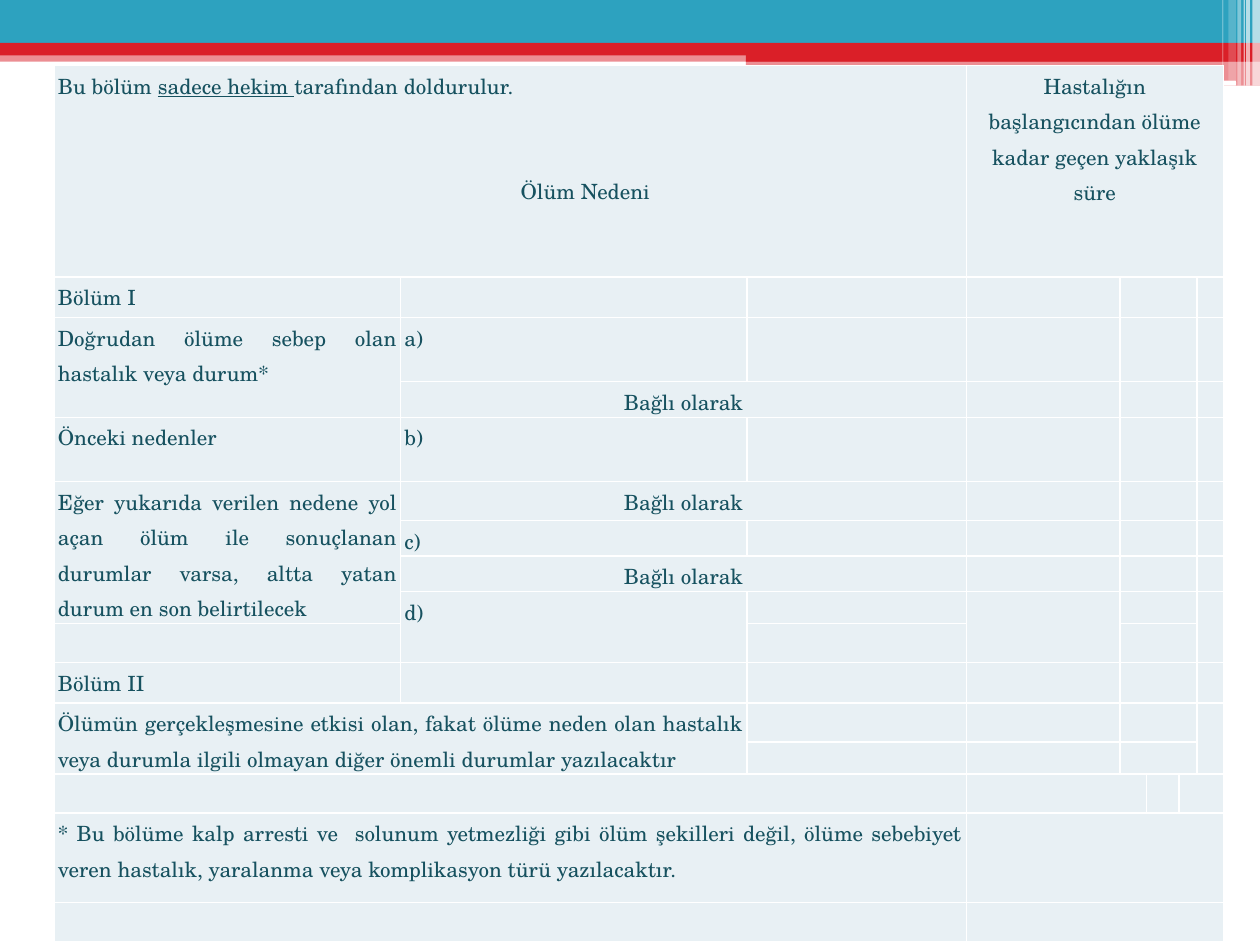
from lxml import etree
from pptx import Presentation
from pptx.dml.color import RGBColor
from pptx.enum.shapes import MSO_SHAPE
from pptx.enum.text import PP_ALIGN
from pptx.oxml.ns import qn
from pptx.util import Inches, Pt

RECT, ROUND = MSO_SHAPE.RECTANGLE, MSO_SHAPE.ROUNDED_RECTANGLE
LEFT, MID, JUST = PP_ALIGN.LEFT, PP_ALIGN.CENTER, PP_ALIGN.JUSTIFY

THEME = {
    "font": "TeX Gyre Schola", "size": 12, "ink": "16515F", "cell": "E8F0F4",
    "white": "FFFFFF", "teal": "2DA2BF", "red": "DA1F28",
}

# Banner parts: shape, left, top, width, height, colour, opacity in percent
BANNER = [
    (RECT, 0, 0.4, 10, 0.09, "red", 50),
    (RECT, 0, 0, 10, 0.34, "teal", 100),
    (RECT, 0, 0.34, 10, 0.1, "red", 100),
    (RECT, 5.92, 0.39, 4.08, 0.1, "red", 100),
    (RECT, 5.92, 0.48, 4.08, 0.2, "red", 50),
    (ROUND, 5.91, 0.54, 3.35, 0.03, "white", 100),
    (ROUND, 8.06, 0.64, 1.75, 0.04, "white", 100),
]
# Pale stripes at the right end: left, width, height, opacity
STRIPES = [
    (9.94, 0.06, 0.68, 65), (9.89, 0.03, 0.68, 65), (9.87, 0.01, 0.68, 60),
    (9.82, 0.03, 0.68, 40), (9.75, 0.06, 0.64, 20), (9.7, 0.01, 0.64, 30),
]

COLS = [2.75, 2.75, 1.74, 1.22, 0.21, 0.26, 0.14, 0.21]
ROWS = [1.68, 0.32, 0.51, 0.2, 0.51, 0.31, 0.2, 0.2,
        0.21, 0.31, 0.32, 0.31, 0.24, 0.31, 0.71, 0.31]

INTRO = ["Bu bölüm ", "sadece hekim ", "tarafından doldurulur."]
CAUSE = "Ölüm Nedeni"
DUE = "Bağlı olarak"
# (row, column): text, alignment
TEXTS = {
    (0, 3): ("Hastalığın başlangıcından ölüme kadar geçen yaklaşık süre", MID),
    (1, 0): ("Bölüm I", JUST),
    (2, 0): ("Doğrudan ölüme sebep olan hastalık veya durum*", JUST),
    (2, 1): ("a)", JUST),
    (3, 1): (DUE, MID),
    (4, 0): ("Önceki nedenler", JUST),
    (4, 1): ("b)", JUST),
    (5, 0): ("Eğer yukarıda verilen nedene yol açan ölüm ile sonuçlanan "
             "durumlar varsa, altta yatan durum en son belirtilecek", JUST),
    (5, 1): (DUE, MID),
    (6, 1): ("c)", JUST),
    (7, 1): (DUE, MID),
    (8, 1): ("d)", JUST),
    (10, 0): ("Bölüm II", JUST),
    (11, 0): ("Ölümün gerçekleşmesine etkisi olan, fakat ölüme neden olan "
              "hastalık veya durumla ilgili olmayan diğer önemli durumlar "
              "yazılacaktır", JUST),
    (14, 0): ("* Bu bölüme kalp arresti ve  solunum yetmezliği gibi ölüm "
              "şekilleri değil, ölüme sebebiyet veren hastalık, yaralanma "
              "veya komplikasyon türü yazılacaktır.", JUST),
}

# Merged areas: first row, first column, last row, last column
MERGES = [(r, 4, r, 6) for r in range(1, 13)]
MERGES += [(r, 1, r, 2) for r in (3, 5, 7)]
MERGES += [(r, 0, r, 2) for r in (0, 13, 14, 15)]
MERGES += [(r, 3, r, 7) for r in (0, 14, 15)]
MERGES += [(2, 0, 3, 0), (5, 0, 8, 0), (8, 1, 9, 1), (8, 3, 9, 3),
           (8, 7, 9, 7), (11, 0, 12, 1), (11, 7, 12, 7),
           (13, 3, 13, 4), (13, 6, 13, 7)]


def tint(name):
    return RGBColor.from_string(THEME[name])


def add_bar(slide, kind, left, top, width, height, color, alpha):
    bar = slide.shapes.add_shape(
        kind, Inches(left), Inches(top), Inches(width), Inches(height))
    bar.shadow.inherit = False
    bar.line.fill.background()
    bar.fill.solid()
    bar.fill.fore_color.rgb = tint(color)
    if alpha < 100:
        clr = bar.fill._xPr.find(".//" + qn("a:srgbClr"))
        etree.SubElement(clr, qn("a:alpha"), val=str(alpha * 1000))


def style_cell(cell):
    props = cell._tc.get_or_add_tcPr()
    for side in ("lnL", "lnR", "lnT", "lnB"):
        line = etree.SubElement(props, qn("a:" + side), w=str(Pt(1)))
        fill = etree.SubElement(line, qn("a:solidFill"))
        etree.SubElement(fill, qn("a:srgbClr"), val=THEME["white"])
    cell.fill.solid()
    cell.fill.fore_color.rgb = tint("cell")
    cell.margin_left = cell.margin_right = Inches(0.03)
    cell.margin_top = cell.margin_bottom = 0


def style_par(par, align):
    par.alignment = align
    par.line_spacing = 1.15
    par.space_after = Pt(10)
    for run in par.runs:
        run.font.name = THEME["font"]
        run.font.size = Pt(THEME["size"])
        run.font.color.rgb = tint("ink")
    if not par.runs:
        # An empty cell takes its height from the end mark
        end = etree.SubElement(par._p, qn("a:endParaRPr"),
                               sz=str(THEME["size"] * 100))
        etree.SubElement(end, qn("a:latin"), typeface=THEME["font"])


def fill_intro(cell):
    first = cell.text_frame.paragraphs[0]
    for part in INTRO:
        first.add_run().text = part
    first.runs[1].font.underline = True
    style_par(first, LEFT)
    cause = cell.text_frame.add_paragraph()
    cause.text = CAUSE
    style_par(cause, MID)
    cause.space_before = Pt(30)
    cause._p.get_or_add_pPr().set("marL", str(Inches(1.19)))


def add_form(slide):
    frame = slide.shapes.add_table(
        len(ROWS), len(COLS), Inches(0.43), Inches(0.52),
        Inches(sum(COLS)), Inches(sum(ROWS)))
    table = frame.table
    for col, width in zip(table.columns, COLS):
        col.width = Inches(width)
    for row, height in zip(table.rows, ROWS):
        row.height = Inches(height)
    for top, left, low, right in MERGES:
        table.cell(top, left).merge(table.cell(low, right))
    for r in range(len(ROWS)):
        for c in range(len(COLS)):
            cell = table.cell(r, c)
            style_cell(cell)
            if (r, c) == (0, 0):
                fill_intro(cell)
                continue
            text, align = TEXTS.get((r, c), ("", LEFT))
            cell.text_frame.text = text
            style_par(cell.text_frame.paragraphs[0], align)


def main():
    deck = Presentation()
    deck.slide_width, deck.slide_height = Inches(10), Inches(7.5)
    slide = deck.slides.add_slide(deck.slide_layouts[6])
    for part in BANNER:
        add_bar(slide, *part)
    for left, width, height, alpha in STRIPES:
        add_bar(slide, RECT, left, 0, width, height, "white", alpha)
    add_form(slide)
    deck.save("out.pptx")


if __name__ == "__main__":
    main()
